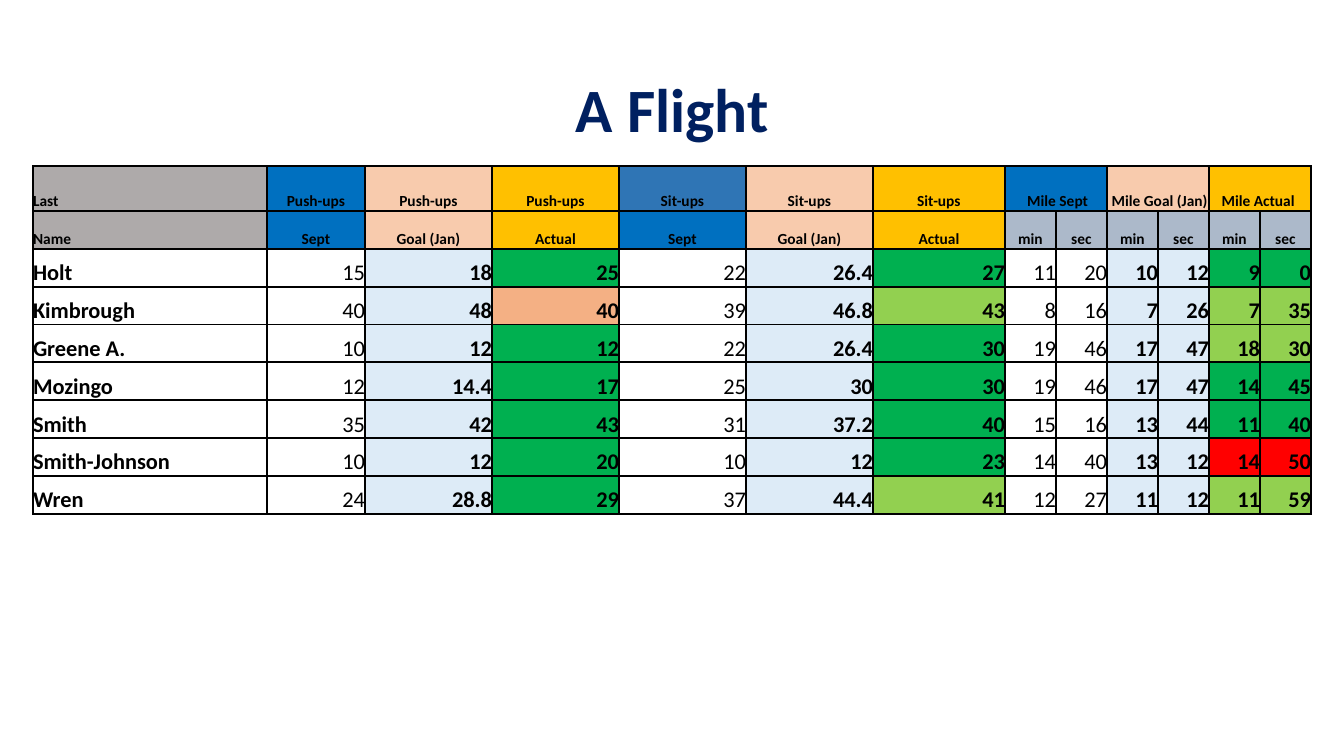
from lxml.etree import SubElement
from pptx import Presentation
from pptx.dml.color import RGBColor
from pptx.enum.text import MSO_ANCHOR as Anchor, PP_ALIGN as Align
from pptx.oxml.ns import qn
from pptx.util import Emu, Pt

EMU_PER_INCH = 914400
PX_PER_INCH = 100.8
FONT = "Calibri"
BLACK, NAVY = "000000", "002060"
GREY, BLUE, STEEL, PEACH, GOLD, SLATE = "AEAAAA", "0070C0", "2F75B5", "F8CBAD", "FFC000", "ACB9CA"
GOAL = "DDEBF7"
RATINGS = {"met": "00B050", "improved": "92D050", "same": "F4B084", "worse": "FF0000"}

TABLE_LEFT, TABLE_TOP, TABLE_HEIGHT, TOP_ROW_HEIGHT = 33, 166, 348, 45
COLUMN_WIDTHS = [234, 98] + [127] * 4 + [132] + [51] * 6
GOAL_COLUMNS = (2, 5, 9, 10)
RATING_OF_COLUMN = {3: 0, 6: 1, 11: 2, 12: 2}

EXERCISES = [
    ("Last", GREY), ("Push-ups", BLUE), ("Push-ups", PEACH), ("Push-ups", GOLD),
    ("Sit-ups", STEEL), ("Sit-ups", PEACH), ("Sit-ups", GOLD),
]
MILES = [(" Mile Sept", BLUE), (" Mile Goal (Jan)", PEACH), ("Mile Actual ", GOLD)]
PERIODS = [("Sept", BLUE), ("Goal (Jan)", PEACH), ("Actual", GOLD)]
SECOND_HEADER = [("Name", GREY)] + PERIODS * 2 + [("min", SLATE), ("sec", SLATE)] * 3

CADETS = [
    ("Holt", "15 18 25 22 26.4 27 11 20 10 12 9 0", ("met", "met", "met")),
    ("Kimbrough", "40 48 40 39 46.8 43 8 16 7 26 7 35", ("same", "improved", "improved")),
    ("Greene A.", "10 12 12 22 26.4 30 19 46 17 47 18 30", ("met", "met", "improved")),
    ("Mozingo", "12 14.4 17 25 30 30 19 46 17 47 14 45", ("met", "met", "met")),
    ("Smith", "35 42 43 31 37.2 40 15 16 13 44 11 40", ("met", "met", "met")),
    ("Smith-Johnson", "10 12 20 10 12 23 14 40 13 12 14 50", ("met", "met", "worse")),
    ("Wren", "24 28.8 29 37 44.4 41 12 27 11 12 11 59", ("met", "improved", "improved")),
]


def px(length):
    return Emu(round(length * EMU_PER_INCH / PX_PER_INCH))


def color(value):
    return RGBColor.from_string(value)


def write(paragraph, text, size, ink, bold, align):
    paragraph.alignment = align
    run = paragraph.add_run()
    run.text = text
    run.font.name = FONT
    run.font.size = Pt(size)
    run.font.bold = bold
    run.font.color.rgb = color(ink)


def add_title(slide, text):
    frame = slide.shapes.add_textbox(px(93), px(40), px(1159), px(146)).text_frame
    frame.word_wrap = True
    frame.vertical_anchor = Anchor.MIDDLE
    frame.paragraphs[0].line_spacing = 0.9
    write(frame.paragraphs[0], text, 44, NAVY, True, Align.CENTER)


def add_borders(cell):
    properties = cell._tc.get_or_add_tcPr()
    for side in ("a:lnL", "a:lnR", "a:lnT", "a:lnB"):
        border = SubElement(properties, qn(side), w=str(Pt(1.5)))
        ink = SubElement(border, qn("a:solidFill"))
        SubElement(ink, qn("a:srgbClr"), val=BLACK)


def prepare_cell(cell):
    cell.margin_left = cell.margin_right = cell.margin_top = cell.margin_bottom = 0
    cell.vertical_anchor = Anchor.BOTTOM
    add_borders(cell)
    cell.fill.background()


def fill_cell(cell, text, fill, size, bold, align):
    if fill:
        cell.fill.solid()
        cell.fill.fore_color.rgb = color(fill)
    write(cell.text_frame.paragraphs[0], text, size, BLACK, bold, align)


def add_grid(slide):
    row_count = len(CADETS) + 2
    grid = slide.shapes.add_table(
        row_count, len(COLUMN_WIDTHS), px(TABLE_LEFT), px(TABLE_TOP),
        px(sum(COLUMN_WIDTHS)), px(TABLE_HEIGHT),
    ).table
    grid.first_row = grid.horz_banding = False
    for column, width in zip(grid.columns, COLUMN_WIDTHS):
        column.width = px(width)
    for row in grid.rows:
        row.height = px((TABLE_HEIGHT - TOP_ROW_HEIGHT) / (row_count - 1))
    grid.rows[0].height = px(TOP_ROW_HEIGHT)
    for cell in grid.iter_cells():
        prepare_cell(cell)
    return grid


def fill_headers(grid):
    top = list(enumerate(EXERCISES))
    for index, mile in enumerate(MILES):
        column = len(EXERCISES) + 2 * index
        grid.cell(0, column).merge(grid.cell(0, column + 1))
        top.append((column, mile))
    for row, headings in enumerate((top, enumerate(SECOND_HEADER))):
        for column, (text, fill) in headings:
            align = Align.CENTER if column else Align.LEFT
            fill_cell(grid.cell(row, column), text, fill, 11, True, align)


def fill_cadet(grid, row, name, scores, ratings):
    fill_cell(grid.cell(row, 0), name, None, 16, True, Align.LEFT)
    for column, score in enumerate(scores.split(), 1):
        fill = None
        if column in GOAL_COLUMNS:
            fill = GOAL
        elif column in RATING_OF_COLUMN:
            fill = RATINGS[ratings[RATING_OF_COLUMN[column]]]
        fill_cell(grid.cell(row, column), score, fill, 16, fill is not None, Align.RIGHT)


def main():
    deck = Presentation()
    deck.slide_width, deck.slide_height = px(1344), px(756)
    slide = deck.slides.add_slide(deck.slide_layouts[6])
    add_title(slide, "A Flight")
    grid = add_grid(slide)
    fill_headers(grid)
    for row, cadet in enumerate(CADETS, 2):
        fill_cadet(grid, row, *cadet)
    deck.save("out.pptx")


if __name__ == "__main__":
    main()
